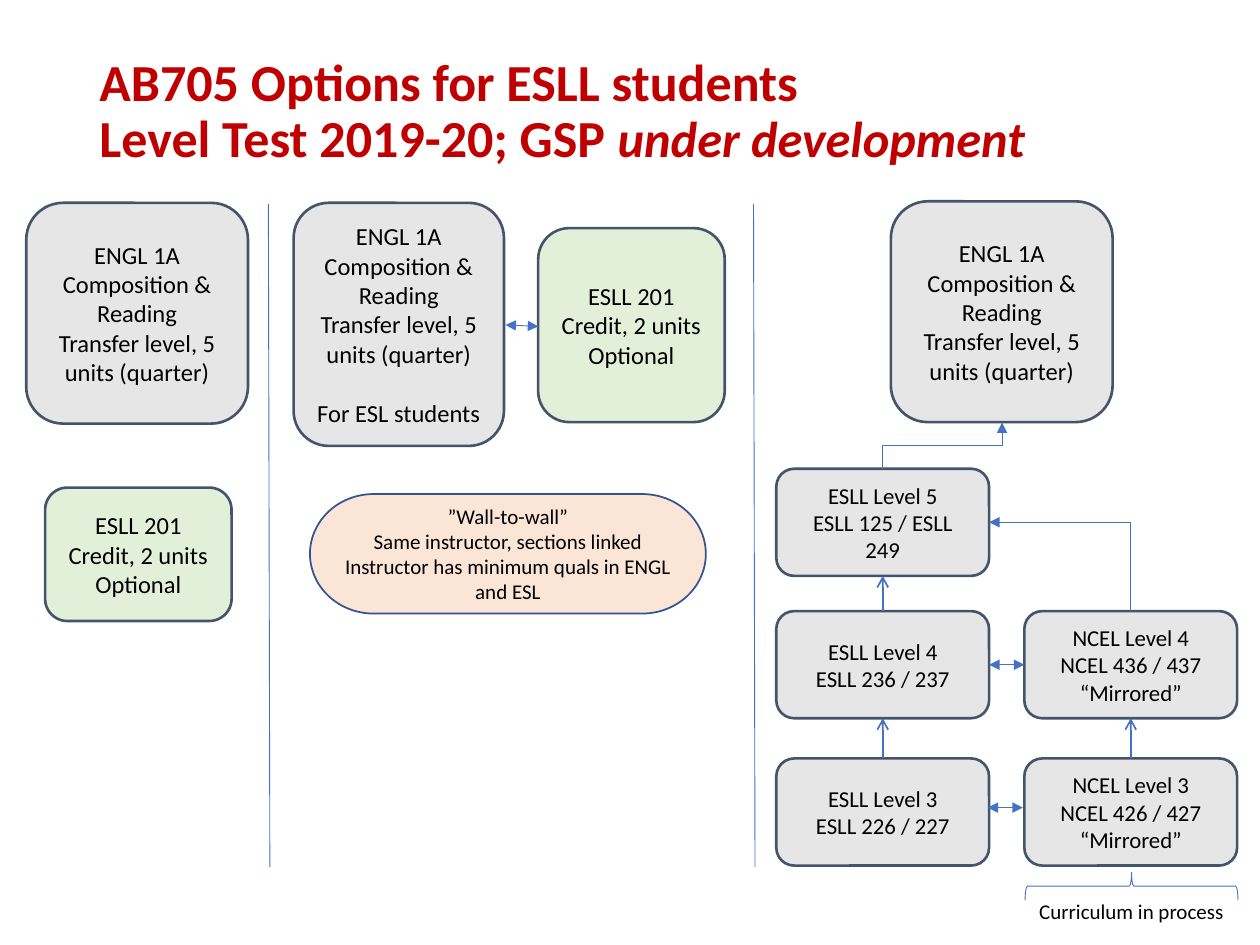
from pptx import Presentation
from pptx.dml.color import RGBColor
from pptx.enum.shapes import MSO_CONNECTOR as Link, MSO_SHAPE as Shape
from pptx.enum.text import MSO_ANCHOR as Anchor, MSO_AUTO_SIZE as Fit, PP_ALIGN as Align
from pptx.oxml.ns import qn
from pptx.util import Cm, Pt
from lxml.etree import SubElement

RED = RGBColor(0xC0, 0x00, 0x00)
BLACK = RGBColor(0x00, 0x00, 0x00)
GRAY = RGBColor(0xE7, 0xE6, 0xE6)
GREEN = RGBColor(0xE2, 0xF0, 0xD9)
PEACH = RGBColor(0xFB, 0xE5, 0xD6)
SLATE = RGBColor(0x44, 0x54, 0x6A)
NAVY = RGBColor(0x32, 0x54, 0x91)
BLUE = RGBColor(0x44, 0x72, 0xC4)

ENGL = ["ENGL 1A", "Composition & Reading", "Transfer level, 5 units (quarter)"]
ESLL = ["ESLL 201", "Credit, 2 units", "Optional"]
LEFT, RIGHT = 15.65, 20.65
WIDE, HIGH = 4.29, 2.16
ROWS = {5: 9.45, 4: 12.32, 3: 15.29}
LEVELS = [
    (LEFT, 5, ["ESLL Level 5", "ESLL 125 / ESLL 249"]),
    (LEFT, 4, ["ESLL Level 4", "ESLL 236 / 237"]),
    (LEFT, 3, ["ESLL Level 3", "ESLL 226 / 227"]),
    (RIGHT, 4, ["NCEL Level 4", "NCEL 436 / 437", "“Mirrored”"]),
    (RIGHT, 3, ["NCEL Level 3", "NCEL 426 / 427", "“Mirrored”"]),
]


def style(font, size, color=BLACK):
    font.name = "Calibri"
    font.size = Pt(size)
    font.color.rgb = color


def write(frame, lines, size, align):
    frame.text = "\n".join(lines)
    for para in frame.paragraphs:
        para.alignment = align
        style(para.font, size)


def add_title(slide):
    title = slide.shapes.title
    title.left, title.top, title.width, title.height = Cm(1.75), Cm(1.02), Cm(21.89), Cm(3.68)
    frame = title.text_frame
    frame.auto_size = Fit.NONE
    frame.vertical_anchor = Anchor.MIDDLE
    frame.margin_bottom = Cm(1.32)
    para = frame.paragraphs[0]
    para.alignment = Align.LEFT
    para.line_spacing = 0.9
    style(para.font, 29.7, RED)
    para.font.bold = True
    para.add_run().text = "AB705 Options for ESLL students"
    para.add_line_break()
    para.add_run().text = "Level Test 2019-20; GSP "
    run = para.add_run()
    run.text = "under development"
    run.font.italic = True
    run.font.size = Pt(28.8)


def add_box(slide, area, lines, fill, size=14, kind=Shape.ROUNDED_RECTANGLE, edge=SLATE, width=1.5, pad=0.25):
    box = slide.shapes.add_shape(kind, *map(Cm, area))
    box.shadow.inherit = False
    box.fill.solid()
    box.fill.fore_color.rgb = fill
    box.line.color.rgb = edge
    box.line.width = Pt(width)
    frame = box.text_frame
    frame.word_wrap = True
    frame.vertical_anchor = Anchor.MIDDLE
    frame.margin_top = frame.margin_bottom = Cm(pad)
    write(frame, lines, size, Align.CENTER)
    return box


def add_line(slide, start, end, width=0.5, head=None, tail=None, kind=Link.STRAIGHT):
    line = slide.shapes.add_connector(kind, *map(Cm, (*start, *end)))
    line.line.color.rgb = BLUE
    line.line.width = Pt(width)
    stroke = line.line._get_or_add_ln()
    for tag, tip in (("a:headEnd", head), ("a:tailEnd", tail)):
        if tip:
            SubElement(stroke, qn(tag), type=tip)
    SubElement(line._element.spPr, qn("a:effectLst"))
    return line


def add_pair(slide, start, end):
    add_line(slide, start, end, head="triangle", tail="triangle")


def add_elbow(slide, start, end, turn, preset):
    sign = 1 if turn == 90 else -1
    mid_x, mid_y = (start[0] + end[0]) / 2, (start[1] + end[1]) / 2
    run, rise = sign * (start[1] - mid_y), -sign * (start[0] - mid_x)
    line = add_line(slide, (mid_x + run, mid_y + rise), (mid_x - run, mid_y - rise),
                    tail="triangle", kind=Link.ELBOW)
    props = line._element.spPr
    props.find(qn("a:xfrm")).set("rot", str(turn * 60000))
    props.find(qn("a:prstGeom")).set("prst", preset)


def add_links(slide):
    for x, y in ((5.41, 4.11), (15.19, 4.11)):
        add_line(slide, (x, y), (x + 0.03, 17.48))
    mid, far, edge = LEFT + WIDE / 2, RIGHT + WIDE / 2, LEFT + WIDE
    for x, low, high in ((mid, 3, 4), (mid, 4, 5), (far, 3, 4)):
        add_line(slide, (x, ROWS[low]), (x, ROWS[high] + HIGH), 1, tail="arrow")
    add_elbow(slide, (far, ROWS[4]), (edge, ROWS[5] + HIGH / 2), 270, "bentConnector2")
    add_elbow(slide, (mid, ROWS[5]), (20.2, 8.52), 90, "bentConnector3")
    add_pair(slide, (10.19, 6.55), (10.85, 6.58))
    add_pair(slide, (edge, 13.4), (RIGHT, 13.4))
    add_pair(slide, (19.91, 16.28), (20.62, 16.28))


def add_note(slide):
    brace = slide.shapes.add_shape(Shape.LEFT_BRACE, Cm(22.53), Cm(15.72), Cm(0.56), Cm(WIDE))
    brace.rotation = 90
    brace.shadow.inherit = False
    brace.fill.background()
    brace.line.color.rgb = BLUE
    brace.line.width = Pt(0.5)
    note = slide.shapes.add_textbox(Cm(20.7), Cm(17.98), Cm(4.27), Cm(0.77))
    note.text_frame.word_wrap = False
    write(note.text_frame, ["Curriculum in process"], 12, Align.LEFT)


def main():
    deck = Presentation()
    deck.slide_width, deck.slide_height = Cm(25.4), Cm(19.05)
    slide = deck.slides.add_slide(deck.slide_layouts[5])
    add_title(slide)
    add_box(slide, (0.53, 4.09, 4.47, 4.45), ENGL, GRAY)
    paired = add_box(slide, (5.92, 4.09, 4.24, 4.9), ENGL + ["For ESL students"], GRAY)
    paired.text_frame.paragraphs[-1].space_before = Pt(17)
    add_box(slide, (17.96, 4.06, 4.47, 4.45), ENGL, GRAY)
    add_box(slide, (10.85, 4.6, 3.76, 3.91), ESLL, GREEN)
    add_box(slide, (0.91, 9.83, 3.76, 2.69), ESLL, GREEN)
    wall = ["”Wall-to-wall”", "Same instructor, sections linked",
            "Instructor has minimum quals in ENGL and ESL"]
    add_box(slide, (6.25, 9.96, 7.98, 2.41), wall, PEACH, 12, Shape.FLOWCHART_TERMINATOR, NAVY, 1, 0.13)
    for x, row, lines in LEVELS:
        add_box(slide, (x, ROWS[row], WIDE, HIGH), lines, GRAY, 13)
    add_links(slide)
    add_note(slide)
    deck.save("out.pptx")


if __name__ == "__main__":
    main()
